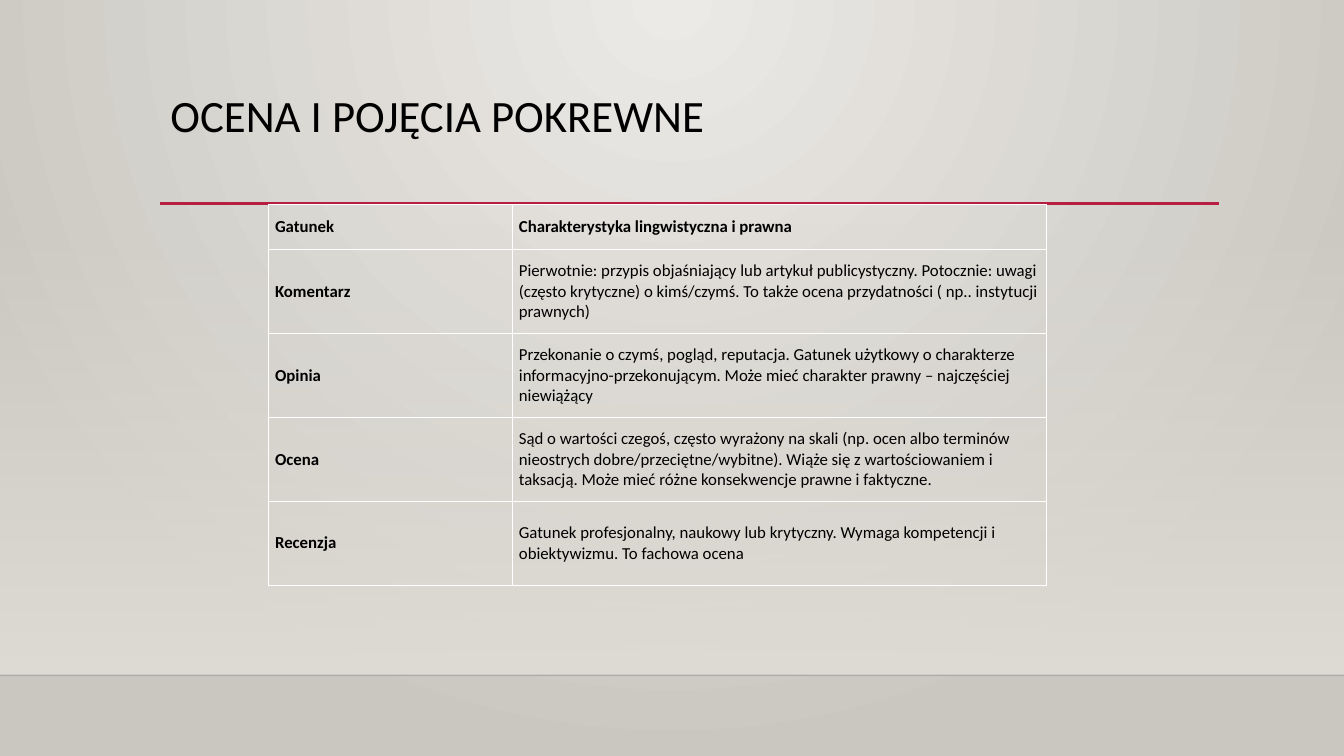
from lxml.etree import SubElement
from pptx import Presentation
from pptx.dml.color import RGBColor
from pptx.enum.shapes import MSO_CONNECTOR, MSO_SHAPE
from pptx.enum.text import MSO_ANCHOR, MSO_AUTO_SIZE, PP_ALIGN
from pptx.oxml.ns import qn
from pptx.util import Pt

BLACK = RGBColor(0x00, 0x00, 0x00)
RULE_BLACK = RGBColor(0x00, 0x00, 0x01)
WHITE = RGBColor(0xFF, 0xFF, 0xFF)
CRIMSON = RGBColor(0xB7, 0x1E, 0x42)
PALE_STONE = RGBColor(0xEC, 0xEA, 0xE7)
DARK_STONE = RGBColor(0xCA, 0xC7, 0xC1)
FLOOR = RGBColor(0xDF, 0xDB, 0xD5)

WIDTH, HEIGHT = 960, 540
LEFT = 114.5
COLUMN_WIDTHS = [174.2, 381.6]
ROW_HEIGHTS = [32.2] + [59.9] * 4
ROWS = [
    ("Gatunek", "Charakterystyka lingwistyczna i prawna"),
    ("Komentarz", "Pierwotnie: przypis objaśniający lub artykuł publicystyczny. "
     "Potocznie: uwagi (często krytyczne) o kimś/czymś. To także ocena "
     "przydatności ( np.. instytucji prawnych)"),
    ("Opinia", "Przekonanie o czymś, pogląd, reputacja. Gatunek użytkowy o "
     "charakterze informacyjno-przekonującym. Może mieć charakter prawny – "
     "najczęściej niewiążący"),
    ("Ocena", "Sąd o wartości czegoś, często wyrażony na skali (np. ocen albo "
     "terminów nieostrych dobre/przeciętne/wybitne). Wiąże się z "
     "wartościowaniem i taksacją. Może mieć różne konsekwencje prawne i "
     "faktyczne."),
    ("Recenzja", "Gatunek profesjonalny, naukowy lub krytyczny. Wymaga "
     "kompetencji i obiektywizmu. To fachowa ocena"),
]


def write_text(frame, text, size=12, bold=False, color=BLACK, spacing=1.0,
               anchor=MSO_ANCHOR.MIDDLE, font="Calibri"):
    frame.word_wrap = True
    frame.vertical_anchor = anchor
    para = frame.paragraphs[0]
    para.alignment = PP_ALIGN.LEFT
    para.line_spacing = spacing
    para.space_before = Pt(0)
    span = para.add_run()
    span.text = text
    span.font.name = font
    span.font.size = Pt(size)
    span.font.bold = bold
    span.font.color.rgb = color


def set_alpha(color_element, percent):
    SubElement(color_element, qn("a:alpha"), val=str(percent * 1000))


def fill_gradient(fill, *colors):
    fill.gradient()
    for stop, color, position in zip(fill.gradient_stops, colors, (0, 1)):
        stop.color.rgb = color
        stop.position = position


class SlideBuilder:
    def __init__(self, slide):
        self.slide = slide
        self.shapes = slide.shapes

    def background(self):
        """Paint a circular gradient that spreads from the top centre."""
        fill_gradient(self.slide.background.fill, PALE_STONE, DARK_STONE)
        gradient = self.slide.element.find(".//" + qn("a:gradFill"))
        gradient.remove(gradient.find(qn("a:lin")))
        circle = SubElement(gradient, qn("a:path"), path="circle")
        SubElement(circle, qn("a:fillToRect"),
                   l="43000", t="0", r="43000", b="100000")

    def fading_panel(self, left, top, width, height, color):
        """Add a panel that goes from clear at the top to solid below."""
        panel = self.shapes.add_shape(MSO_SHAPE.RECTANGLE, Pt(left), Pt(top),
                                      Pt(width), Pt(height))
        panel.shadow.inherit = False
        panel.line.fill.background()
        fill_gradient(panel.fill, color, color)
        panel.fill.gradient_angle = 270
        set_alpha(panel.element.find(".//" + qn("a:srgbClr")), 0)

    def rule(self, left, right, top, color, weight, alpha=100):
        line = self.shapes.add_connector(MSO_CONNECTOR.STRAIGHT, Pt(left),
                                         Pt(top), Pt(right), Pt(top))
        line.line.color.rgb = color
        line.line.width = Pt(weight)
        SubElement(line.element.spPr, qn("a:effectLst"))
        if alpha < 100:
            set_alpha(line.element.find(".//" + qn("a:srgbClr")), alpha)

    def title(self, text, left, top, width, height):
        box = self.shapes.title
        box.left, box.top = Pt(left), Pt(top)
        box.width, box.height = Pt(width), Pt(height)
        write_text(box.text_frame, text, size=32, spacing=0.9,
                   anchor=MSO_ANCHOR.TOP)
        box.text_frame.auto_size = MSO_AUTO_SIZE.NONE

    def table(self, left, top, rows, widths, heights):
        frame = self.shapes.add_table(len(rows), len(widths), Pt(left), Pt(top),
                                      Pt(sum(widths)), Pt(sum(heights)))
        table = frame.table
        table.first_row = table.horz_banding = False
        for column, width in zip(table.columns, widths):
            column.width = Pt(width)
        for row, height in zip(table.rows, heights):
            row.height = Pt(height)
        for r, texts in enumerate(rows):
            for c, text in enumerate(texts):
                self.cell(table.cell(r, c), text, bold=r == 0 or c == 0)

    def cell(self, cell, text, bold):
        write_text(cell.text_frame, text, bold=bold)
        cell.vertical_anchor = MSO_ANCHOR.MIDDLE
        cell.margin_left = cell.margin_right = Pt(4.5)
        cell.margin_top = cell.margin_bottom = Pt(2.25)
        properties = cell._tc.get_or_add_tcPr()
        for side in ("lnL", "lnR", "lnT", "lnB"):
            border = SubElement(properties, qn("a:" + side), w=str(Pt(0.75)))
            solid = SubElement(border, qn("a:solidFill"))
            SubElement(solid, qn("a:srgbClr"), val=str(WHITE))
        cell.fill.background()


def main():
    deck = Presentation()
    deck.slide_width, deck.slide_height = Pt(WIDTH), Pt(HEIGHT)
    page = SlideBuilder(deck.slides.add_slide(deck.slide_layouts[5]))
    page.background()
    page.fading_panel(0, 159, WIDTH, 323.4, FLOOR)
    page.rule(0, WIDTH, 482.4, RULE_BLACK, 1, alpha=20)
    page.rule(LEFT, 871, 145.4, CRIMSON, 2.5)
    page.title("OCENA I POJĘCIA POKREWNE", LEFT, 63.4, 756, 82.8)
    page.table(192, 146.2, ROWS, COLUMN_WIDTHS, ROW_HEIGHTS)
    deck.save("out.pptx")


if __name__ == "__main__":
    main()
